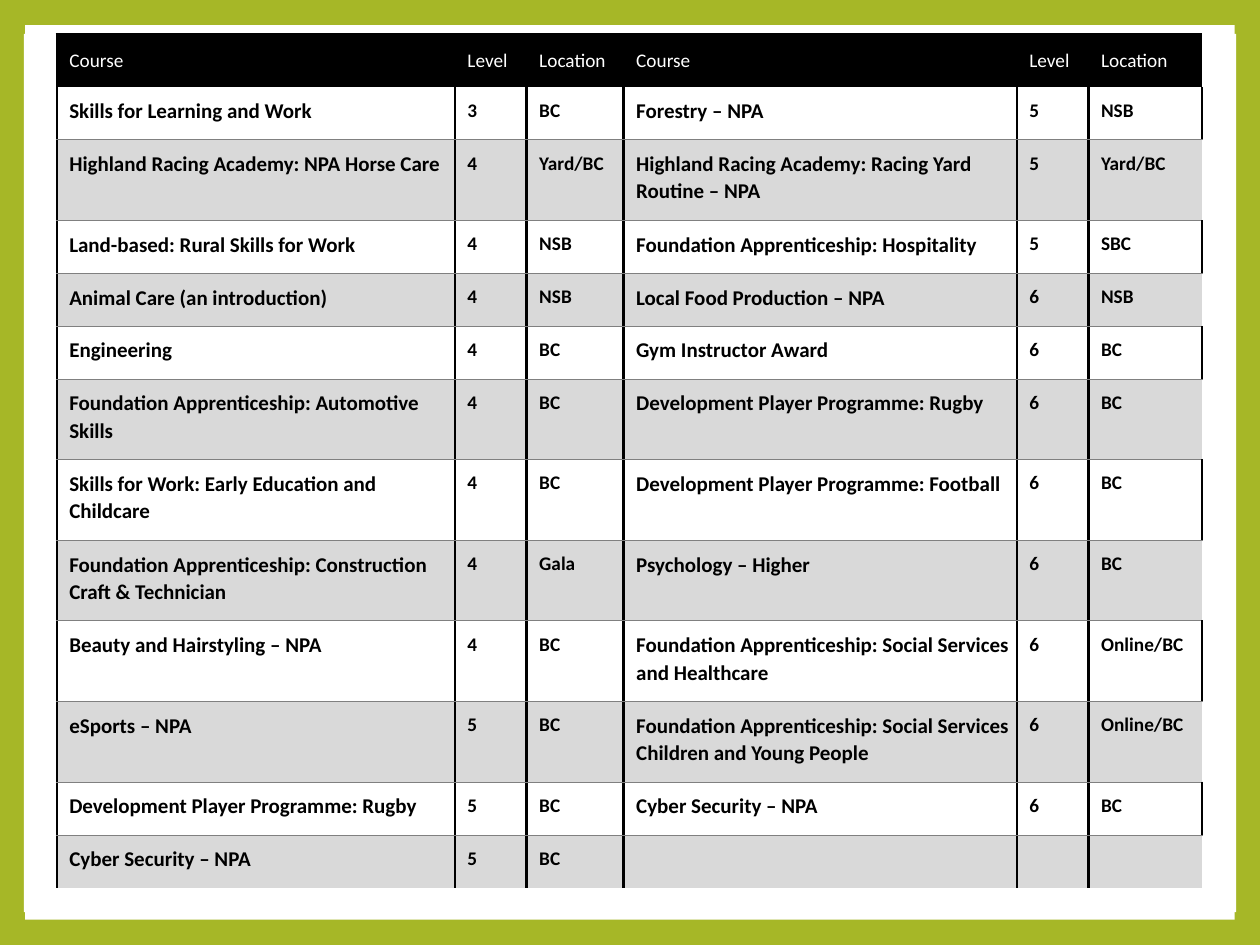
from dataclasses import dataclass
from itertools import zip_longest
from typing import NamedTuple

from lxml.etree import SubElement
from pptx import Presentation
from pptx.dml.color import RGBColor
from pptx.enum.shapes import MSO_SHAPE
from pptx.enum.text import MSO_ANCHOR
from pptx.oxml.ns import qn
from pptx.util import Inches, Pt


@dataclass(frozen=True)
class Theme:
    font: str = "Calibri"
    frame: str = "A6B727"
    paper: str = "FFFFFF"
    ink: str = "000000"
    band: str = "D9D9D9"
    rule: str = "808080"
    course_size: float = 12
    detail_size: float = 11
    column_line: float = 1.5
    row_line: float = 0.5


class Panel(NamedTuple):
    left: float
    top: float
    width: float
    height: float


class Offering(NamedTuple):
    course: str
    level: str
    location: str


class Border(NamedTuple):
    side: str
    color: str
    points: float


THEME = Theme()
NO_GRID_STYLE = "{2D5ABB26-0587-4C30-8999-92F81FD0307C}"
PANELS = [Panel(0.2, 0.2, 9.6, 7.1), Panel(0.19, 0.27, 9.62, 6.97)]
TABLE = Panel(0.45, 0.27, 9.09, 6.78)
COLUMN_WIDTHS = [3.16, 0.57, 0.77, 3.12, 0.57, 0.9]
ONE_LINE_HEIGHT, TWO_LINE_HEIGHT = 0.42, 0.64
ONE_LINE_LIMIT = 40  # characters that fit on one line of a course column

HEADING = Offering("Course", "Level", "Location")
BLANK = Offering("", "", "")
LEFT_OFFERINGS = [
    Offering("Skills for Learning and Work", "3", "BC"),
    Offering("Highland Racing Academy: NPA Horse Care", "4", "Yard/BC"),
    Offering("Land-based: Rural Skills for Work", "4", "NSB"),
    Offering("Animal Care (an introduction)", "4", "NSB"),
    Offering("Engineering", "4", "BC"),
    Offering("Foundation Apprenticeship: Automotive Skills", "4", "BC"),
    Offering("Skills for Work: Early Education and Childcare", "4", "BC"),
    Offering("Foundation Apprenticeship: Construction Craft & Technician", "4", "Gala"),
    Offering("Beauty and Hairstyling – NPA", "4", "BC"),
    Offering("eSports – NPA", "5", "BC"),
    Offering("Development Player Programme: Rugby", "5", "BC"),
    Offering("Cyber Security – NPA", "5", "BC"),
]
RIGHT_OFFERINGS = [
    Offering("Forestry – NPA", "5", "NSB"),
    Offering("Highland Racing Academy: Racing Yard Routine – NPA", "5", "Yard/BC"),
    Offering("Foundation Apprenticeship: Hospitality", "5", "SBC"),
    Offering("Local Food Production – NPA", "6", "NSB"),
    Offering("Gym Instructor Award", "6", "BC"),
    Offering("Development Player Programme: Rugby", "6", "BC"),
    Offering("Development Player Programme: Football", "6", "BC"),
    Offering("Psychology – Higher", "6", "BC"),
    Offering("Foundation Apprenticeship: Social Services and Healthcare", "6", "Online/BC"),
    Offering("Foundation Apprenticeship: Social Services Children and Young People",
             "6", "Online/BC"),
    Offering("Cyber Security – NPA", "6", "BC"),
]


def rgb(color: str) -> RGBColor:
    return RGBColor.from_string(color)


def draw_panel(slide, panel: Panel) -> None:
    paper = slide.shapes.add_shape(MSO_SHAPE.RECTANGLE, *map(Inches, panel))
    paper.shadow.inherit = False
    paper.fill.solid()
    paper.fill.fore_color.rgb = rgb(THEME.paper)
    paper.line.fill.background()


def cell_borders(row: int, column: int) -> list[Border]:
    """Borders of one cell, in the order left, right, top, bottom."""
    left, right = (Border(side, THEME.ink, THEME.column_line) for side in ("L", "R"))
    if row == 0:
        top = Border("T", THEME.ink, THEME.column_line)
        return [left, top] if column == 0 else [top]
    if row % 2:
        return [left, right, Border("B", THEME.rule, THEME.row_line)]
    top = Border("T", THEME.rule, THEME.row_line)
    return [left, top] if column == len(COLUMN_WIDTHS) - 1 else [left, right, top]


def draw_borders(cell, borders: list[Border]) -> None:
    properties = cell._tc.get_or_add_tcPr()
    for border in borders:
        line = SubElement(properties, qn(f"a:ln{border.side}"), w=str(Pt(border.points)))
        fill = SubElement(line, qn("a:solidFill"))
        SubElement(fill, qn("a:srgbClr"), val=border.color)


def fill_cell(cell, row: int) -> None:
    if row % 2:
        cell.fill.background()
        return
    cell.fill.solid()
    cell.fill.fore_color.rgb = rgb(THEME.band if row else THEME.ink)


def write_cell(cell, text: str, is_heading: bool, is_course: bool) -> None:
    cell.margin_left, cell.margin_right = Inches(0.1), Inches(0.05)
    cell.margin_top = cell.margin_bottom = Inches(0.08)
    cell.vertical_anchor = MSO_ANCHOR.MIDDLE if is_heading else MSO_ANCHOR.TOP
    paragraph = cell.text_frame.paragraphs[0]
    paragraph.text = text
    paragraph.line_spacing = 1.07
    paragraph.space_after = Pt(8)
    large = is_course and not is_heading
    font = paragraph.runs[0].font
    font.name = THEME.font
    font.size = Pt(THEME.course_size if large else THEME.detail_size)
    font.bold = not is_heading
    font.color.rgb = rgb(THEME.paper if is_heading else THEME.ink)


def draw_timetable(slide) -> None:
    pairs = zip_longest(LEFT_OFFERINGS, RIGHT_OFFERINGS, fillvalue=BLANK)
    rows = [HEADING + HEADING] + [left + right for left, right in pairs]
    table = slide.shapes.add_table(
        len(rows), len(COLUMN_WIDTHS), *map(Inches, TABLE)).table
    table.horz_banding = False
    table._tbl.tblPr.find(qn("a:tableStyleId")).text = NO_GRID_STYLE
    for column, width in zip(table.columns, COLUMN_WIDTHS):
        column.width = Inches(width)
    for row, texts in enumerate(rows):
        wraps = max(map(len, texts)) > ONE_LINE_LIMIT
        table.rows[row].height = Inches(TWO_LINE_HEIGHT if wraps else ONE_LINE_HEIGHT)
        for column, text in enumerate(texts):
            cell = table.cell(row, column)
            draw_borders(cell, cell_borders(row, column))
            fill_cell(cell, row)
            if text:
                write_cell(cell, text, row == 0, column % len(HEADING) == 0)


def main() -> None:
    presentation = Presentation()
    presentation.slide_width, presentation.slide_height = Inches(10), Inches(7.5)
    slide = presentation.slides.add_slide(presentation.slide_layouts[6])
    slide.background.fill.solid()
    slide.background.fill.fore_color.rgb = rgb(THEME.frame)
    for panel in PANELS:
        draw_panel(slide, panel)
    draw_timetable(slide)
    presentation.save("out.pptx")


if __name__ == "__main__":
    main()
